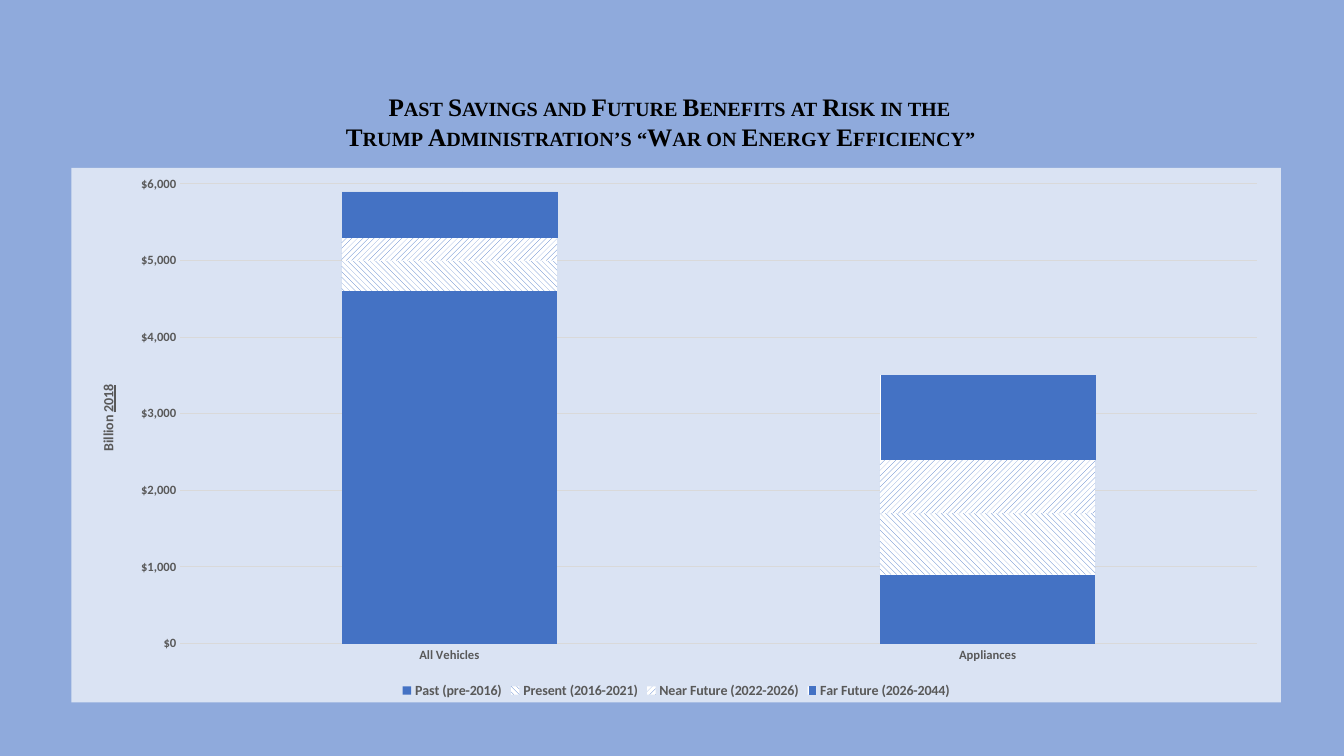
from dataclasses import dataclass

from lxml import etree
from pptx import Presentation
from pptx import util as u
from pptx.chart.axis import ValueAxis
from pptx.chart.chart import Chart
from pptx.chart.data import CategoryChartData
from pptx.dml.color import RGBColor
from pptx.enum import chart as charts, dml, text
from pptx.oxml import parse_xml
from pptx.oxml.ns import nsdecls, qn
from pptx.slide import Slide
from pptx.text.text import Font

EMU_PER_PX = 9525
BACKGROUND = RGBColor(0x8F, 0xAA, 0xDC)
PANEL = RGBColor(0xDA, 0xE3, 0xF3)
BLUE = RGBColor(0x44, 0x72, 0xC4)
WHITE = RGBColor(0xFF, 0xFF, 0xFF)
BLACK = RGBColor(0, 0, 0)
GRAY = RGBColor(0x59, 0x59, 0x59)
GRID = RGBColor(0xD9, 0xD9, 0xD9)


@dataclass(frozen=True)
class Period:
    """A stacked layer of savings and its hatch, if any."""
    name: str
    savings: tuple[int, int]
    pattern: dml.MSO_PATTERN | None = None


CATEGORIES = ("All Vehicles", "Appliances")
PERIODS = (
    Period("Past (pre-2016)", (4600, 900)),
    Period("Present (2016-2021)", (400, 800), dml.MSO_PATTERN.WIDE_DOWNWARD_DIAGONAL),
    Period("Near Future (2022-2026)", (300, 700), dml.MSO_PATTERN.WIDE_UPWARD_DIAGONAL),
    Period("Far Future (2026-2044)", (600, 1100), dml.MSO_PATTERN.DARK_VERTICAL),
)
HEADING = (
    ("Past Savings and Future Benefits at Risk in the ", text.PP_ALIGN.CENTER),
    ("Trump Administration’s “War on Energy Efficiency”", text.PP_ALIGN.LEFT),
)


def px(length: int) -> u.Emu:
    """Convert whole pixels to EMU."""
    return u.Emu(length * EMU_PER_PX)


def style_font(font: Font, size: int, color: RGBColor, name: str = "Calibri", bold: bool = True) -> None:
    """Set the face, size, weight and colour of a font."""
    font.name, font.size, font.bold = name, u.Pt(size), bold
    font.color.rgb = color


def manual_layout(target: str | None = None, **fractions: float) -> etree._Element:
    """Make a chart layout from fractions of the chart's size."""
    layout = parse_xml(f"<c:layout {nsdecls('c')}><c:manualLayout/></c:layout>")
    settings = {"layoutTarget": target} if target else {}
    settings |= {"xMode": "edge", "yMode": "edge"} | fractions
    for tag, value in settings.items():
        etree.SubElement(layout[0], qn(f"c:{tag}")).set("val", str(value))
    return layout


def add_heading(slide: Slide) -> None:
    """Add the two-line heading in small capitals."""
    frame = slide.shapes.add_textbox(px(320), px(82), px(640), px(68)).text_frame
    frame.word_wrap = True
    frame.auto_size = text.MSO_AUTO_SIZE.SHAPE_TO_FIT_TEXT
    frame.text = "\n".join(line for line, _ in HEADING)
    for paragraph, (_, alignment) in zip(frame.paragraphs, HEADING):
        paragraph.alignment = alignment
        font = paragraph.runs[0].font
        style_font(font, 18, BLACK, "Times New Roman")
        paragraph.runs[0]._r.get_or_add_rPr().set("cap", "small")


def style_value_axis(axis: ValueAxis) -> None:
    """Format the dollar scale, its gridlines and its title."""
    axis.minimum_scale, axis.maximum_scale, axis.major_unit = 0, 6000, 1000
    axis.tick_labels.number_format = '"$"#,##0'
    axis.tick_labels.number_format_is_linked = False
    axis.format.line.fill.background()
    axis.major_gridlines.format.line.color.rgb = GRID
    axis.major_gridlines.format.line.width = u.Pt(0.75)
    paragraph = axis.axis_title.text_frame.paragraphs[0]
    for words, underlined in (("Billion ", False), ("2018", True)):
        run = paragraph.add_run()
        run.text = words
        style_font(run.font, 10, GRAY)
        run.font.underline = underlined
    title = axis.axis_title._element
    title.get_or_add_tx_rich().bodyPr.set("rot", "-5400000")
    title.get_or_add_tx_rich().bodyPr.set("vert", "horz")
    for layout in title.findall(qn("c:layout")):
        title.remove(layout)
    title.find(qn("c:tx")).addnext(manual_layout(x=0.02, y=0.4))


def fill_panel(chart: Chart) -> None:
    """Fill the chart area and fix the plot's place in it."""
    panel = parse_xml(
        f"<c:spPr {nsdecls('c', 'a')}><a:solidFill><a:srgbClr val='{PANEL}'/></a:solidFill>"
        "<a:ln><a:noFill/></a:ln></c:spPr>"
    )
    chart._chartSpace.find(qn("c:txPr")).addprevious(panel)
    plot_area = chart._chartSpace.chart.plotArea
    for layout in plot_area.findall(qn("c:layout")):
        plot_area.remove(layout)
    plot_area.insert(0, manual_layout("inner", x=0.09, y=0.03, w=0.89, h=0.86))


def add_savings_chart(slide: Slide) -> None:
    """Add the stacked columns of savings by period."""
    data = CategoryChartData()
    data.categories = CATEGORIES
    for period in PERIODS:
        data.add_series(period.name, period.savings)
    chart = slide.shapes.add_chart(
        charts.XL_CHART_TYPE.COLUMN_STACKED, px(68), px(160), px(1152), px(509), data
    ).chart
    style_font(chart.font, 10, BLACK, bold=False)
    chart.has_title = False
    chart.has_legend = True
    chart.legend.position = charts.XL_LEGEND_POSITION.BOTTOM
    chart.legend.include_in_layout = False
    style_font(chart.legend.font, 10, GRAY)
    plot = chart.plots[0]
    plot.gap_width, plot.overlap, plot.vary_by_categories = 150, 100, False
    for series, period in zip(plot.series, PERIODS):
        fill = series.format.fill
        if period.pattern is None:
            fill.solid()
        else:
            fill.patterned()
            fill.pattern = period.pattern
            fill.back_color.rgb = WHITE
        fill.fore_color.rgb = BLUE
    for axis in (chart.category_axis, chart.value_axis):
        axis.major_tick_mark = axis.minor_tick_mark = charts.XL_TICK_MARK.NONE
        style_font(axis.tick_labels.font, 9, GRAY)
    chart.category_axis.format.line.color.rgb = GRID
    chart.category_axis.format.line.width = u.Pt(0.75)
    style_value_axis(chart.value_axis)
    fill_panel(chart)


def main() -> None:
    """Build and save the slide."""
    presentation = Presentation()
    presentation.slide_width, presentation.slide_height = px(1280), px(720)
    slide = presentation.slides.add_slide(presentation.slide_layouts[6])
    slide.background.fill.solid()
    slide.background.fill.fore_color.rgb = BACKGROUND
    add_savings_chart(slide)
    add_heading(slide)
    presentation.save("out.pptx")


if __name__ == "__main__":
    main()
